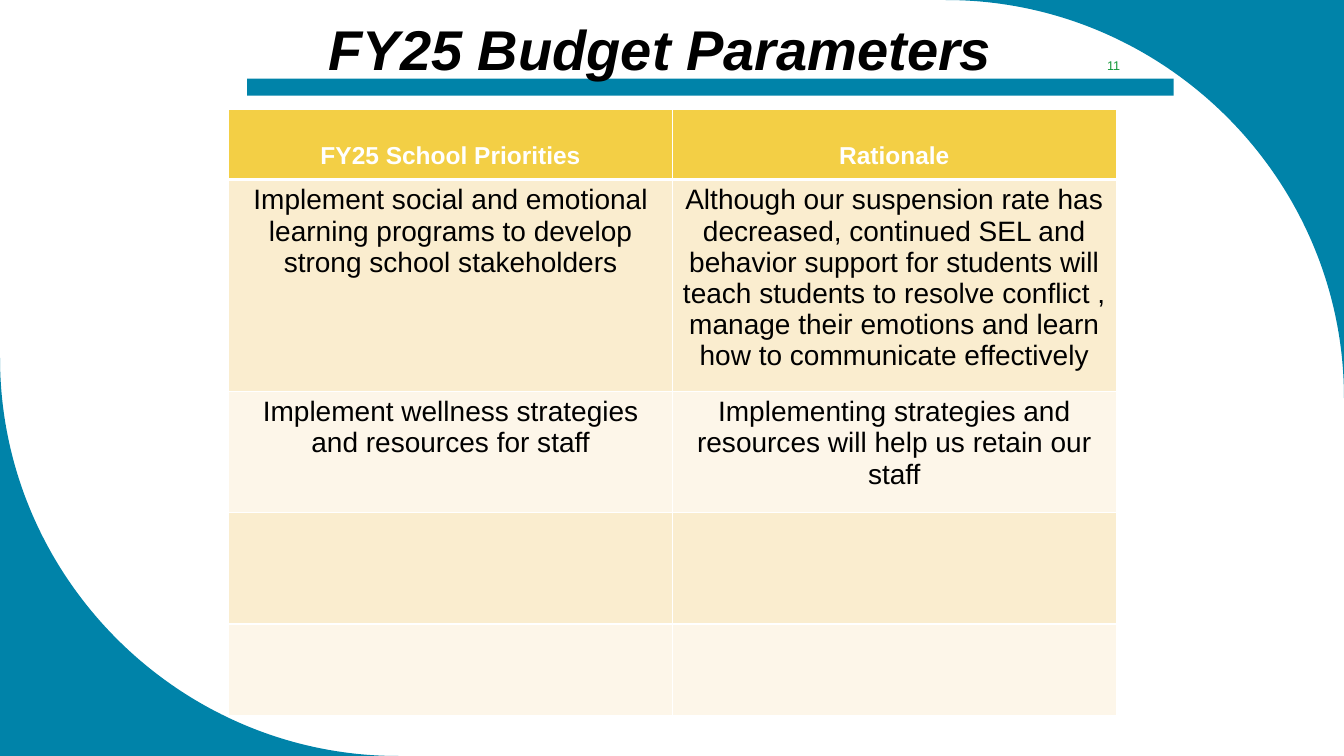
from lxml import etree
from pptx import Presentation
from pptx.dml.color import RGBColor
from pptx.enum.shapes import MSO_SHAPE
from pptx.enum.text import MSO_ANCHOR, PP_ALIGN
from pptx.oxml.ns import qn
from pptx.util import Inches, Pt

RECT = MSO_SHAPE.RECTANGLE
CENTER = PP_ALIGN.CENTER
TOP, MIDDLE, BOTTOM = MSO_ANCHOR.TOP, MSO_ANCHOR.MIDDLE, MSO_ANCHOR.BOTTOM

COLORS = {
    "teal": "0083A9",
    "gold": "F3CF45",
    "cream": "FAEDCF",
    "ivory": "FDF6E9",
    "green": "159839",
    "black": "000000",
    "white": "FFFFFF",
}
FONT = "Arial"
WIDTH, HEIGHT, RADIUS = 13.33, 7.5, 3.95
ARC_PULL = 0.55

HEADERS = ["FY25 School Priorities", "Rationale"]
PRIORITIES = [
    ["Implement social and emotional learning programs to develop strong school stakeholders",
     "Although our suspension rate has decreased, continued SEL and behavior support for "
     "students will teach students to resolve conflict , manage their emotions and learn "
     "how to communicate effectively"],
    ["Implement wellness strategies and resources for staff",
     "Implementing strategies and resources will help us retain our staff"],
    ["", ""],
    ["", ""],
]
ROW_HEIGHTS = [0.69, 2.09, 1.2, 1.11, 0.91]


def rgb(name):
    return RGBColor.from_string(COLORS[name])


def write(tf, text, size=20, color="black", bold=False, italic=False):
    p = tf.paragraphs[0]
    p.alignment = CENTER
    r = p.add_run()
    r.text = text
    r.font.name = FONT
    r.font.size = Pt(size)
    r.font.bold = bold
    r.font.italic = italic
    r.font.color.rgb = rgb(color)


class SlideBuilder:
    def __init__(self, slide):
        self.slide = slide

    def paint(self, s, color):
        s.shadow.inherit = False
        s.fill.solid()
        s.fill.fore_color.rgb = rgb(color)
        s.line.fill.background()

    def bar(self, x, y, w, h, color):
        s = self.slide.shapes.add_shape(RECT, Inches(x), Inches(y), Inches(w), Inches(h))
        self.paint(s, color)

    def corner(self, x, y, dx, dy, color):
        ends = [(x + dx * RADIUS, y), (x, y + dy * RADIUS)]
        fb = self.slide.shapes.build_freeform(Inches(x), Inches(y))
        fb.add_line_segments([(Inches(px), Inches(py)) for px, py in ends], close=True)
        s = fb.convert_to_shape()
        self.paint(s, color)
        self.bend(s)

    def bend(self, s):
        points = list(s._element.iter(qn("a:pt")))
        corner, start, end = [(int(pt.get("x")), int(pt.get("y"))) for pt in points]
        line = points[2].getparent()
        curve = etree.Element(qn("a:cubicBezTo"))
        for anchor, pull in ((start, ARC_PULL), (end, ARC_PULL), (end, 0)):
            px, py = [round(a + (c - a) * pull) for a, c in zip(anchor, corner)]
            etree.SubElement(curve, qn("a:pt"), x=str(px), y=str(py))
        line.getparent().replace(line, curve)

    def text(self, x, y, w, h, text, anchor=TOP, **style):
        s = self.slide.shapes.add_textbox(Inches(x), Inches(y), Inches(w), Inches(h))
        tf = s.text_frame
        tf.word_wrap = True
        tf.vertical_anchor = anchor
        write(tf, text, **style)

    def borders(self, cell, **widths):
        tc_pr = cell._tc.get_or_add_tcPr()
        for side in ("L", "R", "T", "B"):
            ln = etree.SubElement(tc_pr, qn(f"a:ln{side}"), w=str(Pt(widths.get(side, 1))))
            fill = etree.SubElement(ln, qn("a:solidFill"))
            etree.SubElement(fill, qn("a:srgbClr"), val=COLORS["white"])

    def cell(self, cell, text, fill, anchor=TOP, edges=None, **style):
        self.borders(cell, **(edges or {}))
        cell.fill.solid()
        cell.fill.fore_color.rgb = rgb(fill)
        cell.vertical_anchor = anchor
        if text:
            write(cell.text_frame, text, **style)

    def table(self, x, y, w, headers, body, heights):
        frame = self.slide.shapes.add_table(
            len(heights), len(headers), Inches(x), Inches(y), Inches(w), Inches(sum(heights)))
        table = frame.table
        for row, height in zip(table.rows, heights):
            row.height = Inches(height)
        for col, header in enumerate(headers):
            table.columns[col].width = Inches(w / len(headers))
            head = table.cell(0, col)
            head.margin_bottom = Inches(0.1)
            self.cell(head, header, "gold", BOTTOM, {"B": 3},
                      size=17.5, color="white", bold=True)
        for i, values in enumerate(body, 1):
            for col, value in enumerate(values):
                edges = {"T": 3} if i == 1 else None
                self.cell(table.cell(i, col), value, "cream" if i % 2 else "ivory", edges=edges)


def main():
    prs = Presentation()
    prs.slide_width, prs.slide_height = Inches(WIDTH), Inches(HEIGHT)
    b = SlideBuilder(prs.slides.add_slide(prs.slide_layouts[6]))
    b.corner(WIDTH, 0, -1, 1, "teal")
    b.corner(0, HEIGHT, 1, -1, "teal")
    b.bar(2.45, 0.78, 9.19, 0.17, "teal")
    b.text(3.05, 0.09, 6.99, 0.77, "FY25 Budget Parameters", size=40, bold=True, italic=True)
    b.table(2.27, 1.09, 8.8, HEADERS, PRIORITIES, ROW_HEIGHTS)
    b.text(10.64, 0.5, 0.81, 0.3, "11", MIDDLE, size=9, color="green")
    prs.save("out.pptx")


if __name__ == "__main__":
    main()
